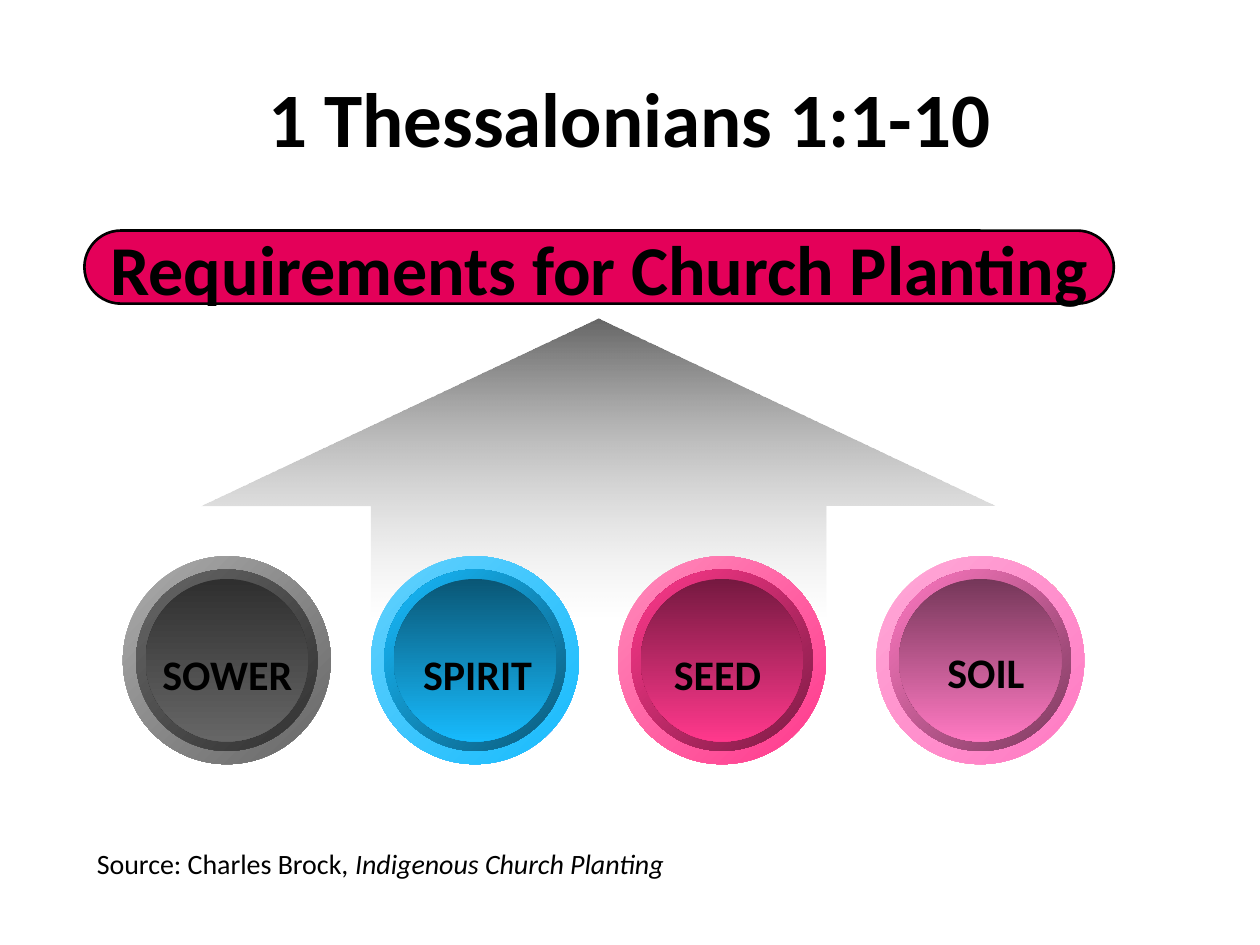
from lxml.etree import SubElement
from pptx import Presentation
from pptx.dml.color import RGBColor
from pptx.enum.shapes import MSO_SHAPE
from pptx.enum.text import MSO_ANCHOR, MSO_AUTO_SIZE, PP_ALIGN
from pptx.oxml.ns import qn
from pptx.util import Inches, Pt


def style(font, size, bold=False):
    font.name, font.size, font.bold = "Calibri", Pt(size), bold
    font.color.rgb = RGBColor.from_string("000000")


def fill_gradient(shape, angle, stops):
    """Fill with stops of (percent, hex colour, {modifier: percent}); angle runs clockwise."""
    shape.shadow.inherit = False
    shape.line.fill.background()
    shape.fill.solid()
    fill = shape._element.spPr.find(qn("a:solidFill"))
    fill.clear()
    fill.tag = qn("a:gradFill")
    stop_list = SubElement(fill, qn("a:gsLst"))
    for position, color, modifiers in stops:
        stop = SubElement(stop_list, qn("a:gs"), pos=str(position * 1000))
        value = SubElement(stop, qn("a:srgbClr"), val=color)
        if modifiers:
            SubElement(value, qn("a:gamma"))
            for name, percent in modifiers.items():
                SubElement(value, qn("a:" + name), val=str(round(percent * 1000)))
            SubElement(value, qn("a:invGamma"))
    SubElement(fill, qn("a:lin"), ang=str(angle * 60000), scaled="1")


deck = Presentation()
deck.slide_width, deck.slide_height = Inches(10), Inches(7.5)
page = deck.slides.add_slide(deck.slide_layouts[5])

title = page.shapes.title
title.left, title.top = Inches(0.5), Inches(0.3)
title.width, title.height = Inches(9), Inches(1.25)
title.text_frame.text = "1 Thessalonians 1:1-10"
title.text_frame.vertical_anchor = MSO_ANCHOR.MIDDLE
title.text_frame.paragraphs[0].alignment = PP_ALIGN.CENTER
style(title.text_frame.paragraphs[0].runs[0].font, 44, bold=True)

arrow = page.shapes.add_shape(
    MSO_SHAPE.UP_ARROW, Inches(1.6), Inches(2.53), Inches(6.3), Inches(2.36))
arrow.adjustments[0], arrow.adjustments[1] = 0.573, 0.628
fill_gradient(arrow, 90, [(0, "666666", {}), (100, "666666", {"tint": 33.33, "alpha": 0})])

# Each button: label, colour, centre x, rim tint, label left, top and width
buttons = [
    ("SOWER", "666666", 1.8, 53.73, 1.19, 5.1, 1.24),
    ("SPIRIT", "17BBFD", 3.77, 66.67, 3.26, 5.1, 1.07),
    ("SEED", "FF388C", 5.73, 57.65, 5.25, 5.1, 0.9),
    ("SOIL", "FF79C2", 7.78, 63.53, 7.42, 5.08, 0.82),
]
center_y = 5.24
for _, color, center_x, tint, *_ in buttons:
    plain = (100, color, {})
    edge = {"shade": 54.51}
    discs = [
        (1.65, 45, [(0, "FFFFFF", {}), (50, color, {}), (100, "FFFFFF", {})]),
        (1.65, 45, [(0, color, {"tint": tint}), plain]),
        (1.44, 315, [(0, color, edge), (50, color, {}), (100, color, edge)]),
        (1.44, 45, [(0, color, {}), (100, color, {"shade": 48.63})]),
        (1.29, 90, [(0, color, {"shade": 46.27}), plain]),
    ]
    button = page.shapes.add_group_shape()
    for size, angle, stops in discs:
        disc = button.shapes.add_shape(
            MSO_SHAPE.OVAL, Inches(center_x - size / 2), Inches(center_y - size / 2),
            Inches(size), Inches(size))
        fill_gradient(disc, angle, stops)

banner = page.shapes.add_shape(
    MSO_SHAPE.ROUNDED_RECTANGLE, Inches(0.67), Inches(1.83), Inches(8.17), Inches(0.58))
banner.adjustments[0] = 0.5
banner.shadow.inherit = False
banner.fill.solid()
banner.fill.fore_color.rgb = RGBColor.from_string("E40059")
banner.line.color.rgb = RGBColor.from_string("000000")
banner.line.width = Pt(1.5)
banner.text_frame.text = "Requirements for Church Planting"
banner.text_frame.word_wrap = False
banner.text_frame.vertical_anchor = MSO_ANCHOR.MIDDLE
banner.text_frame.paragraphs[0].alignment = PP_ALIGN.CENTER
style(banner.text_frame.paragraphs[0].runs[0].font, 40, bold=True)

for text, _, _, _, left, top, width in buttons:
    label = page.shapes.add_textbox(Inches(left), Inches(top), Inches(width), Inches(0.5))
    label.text_frame.text = text
    label.text_frame.word_wrap = False
    label.text_frame.auto_size = MSO_AUTO_SIZE.SHAPE_TO_FIT_TEXT
    style(label.text_frame.paragraphs[0].runs[0].font, 24, bold=True)

source = page.shapes.add_textbox(Inches(0.67), Inches(6.67), Inches(5.33), Inches(0.37))
source.text_frame.word_wrap = True
source.text_frame.auto_size = MSO_AUTO_SIZE.SHAPE_TO_FIT_TEXT
para = source.text_frame.paragraphs[0]
for text, italic in [("Source: Charles Brock, ", False), ("Indigenous Church Planting", True)]:
    span = para.add_run()
    span.text = text
    style(span.font, 16)
    span.font.italic = italic

deck.save("out.pptx")
